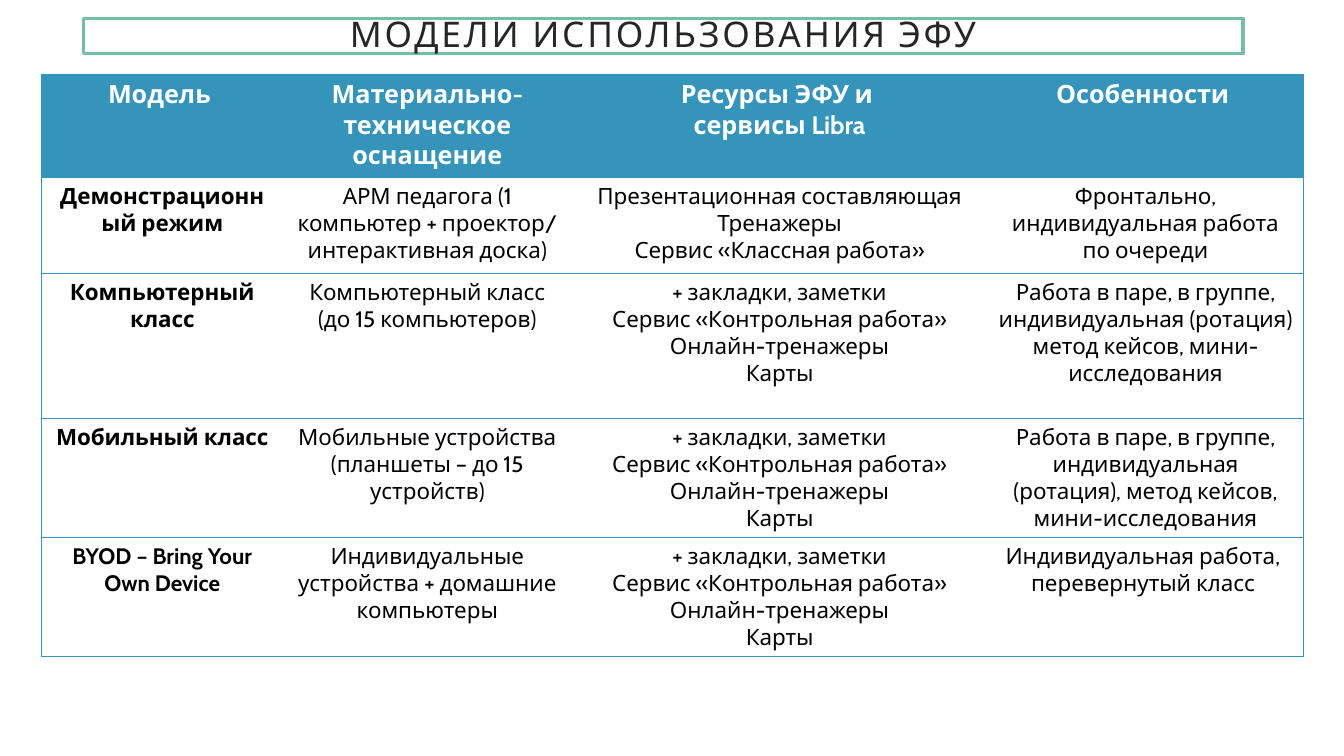
import pptx
import pptx.util
import pptx.dml.color
import pptx.enum.text
import lxml.etree

Pt = pptx.util.Pt
RGB = pptx.dml.color.RGBColor
ALIGN = pptx.enum.text.PP_ALIGN
ANCHOR = pptx.enum.text.MSO_ANCHOR

BLUE = RGB(0x34, 0x94, 0xBA)
GREEN = RGB(0x75, 0xBD, 0xA7)
DARK = RGB(0x26, 0x26, 0x26)
BLACK = RGB(0, 0, 0)
WHITE = RGB(255, 255, 255)
FONT = "Cabin"

TITLE = "МОДЕЛИ ИСПОЛЬЗОВАНИЯ ЭФУ"
SERVICES = [
    "+ закладки, заметки",
    "Сервис «Контрольная работа»",
    "Онлайн-тренажеры",
    "Карты",
]
ROWS = [
    [
        ["Модель "],
        ["Материально-техническое оснащение"],
        ["Ресурсы ЭФУ и ", "сервисы Libra"],
        ["Особенности "],
    ],
    [
        ["Демонстрационный режим"],
        ["АРМ педагога (1 компьютер + проектор/ интерактивная доска)"],
        ["Презентационная составляющая", "Тренажеры", "Сервис «Классная работа»"],
        ["Фронтально, индивидуальная работа по очереди"],
    ],
    [
        ["Компьютерный класс"],
        ["Компьютерный класс (до 15 компьютеров)"],
        SERVICES,
        ["Работа в паре, в группе, индивидуальная (ротация)",
         "метод кейсов, мини-исследования"],
    ],
    [
        ["Мобильный класс"],
        ["Мобильные устройства (планшеты – до 15 устройств)"],
        SERVICES,
        ["Работа в паре, в группе, индивидуальная (ротация), метод кейсов, "
         "мини-исследования"],
    ],
    [
        ["BYOD – Bring Your Own Device"],
        ["Индивидуальные устройства + домашние компьютеры"],
        SERVICES,
        ["Индивидуальная работа, ", "перевернутый класс "],
    ],
]
COL_WIDTHS = [172.8, 205.9, 297.4, 225.4]
ROW_HEIGHTS = [74, 68.7, 103.5, 85, 84.3]
TABLE_LEFT, TABLE_TOP = 29.5, 52.8


def apply(obj, values):
    for name, value in values.items():
        setattr(obj, name, value)


def add_border(cell, side, visible):
    tag = pptx.oxml.ns.qn
    ln = lxml.etree.SubElement(cell._tc.get_or_add_tcPr(), tag("a:ln" + side), w=str(Pt(0.5)))
    if visible:
        fill = lxml.etree.SubElement(ln, tag("a:solidFill"))
        lxml.etree.SubElement(fill, tag("a:srgbClr"), val=str(BLUE))
    else:
        lxml.etree.SubElement(ln, tag("a:noFill"))


def add_title(s):
    sp = s.shapes.title
    apply(sp, dict(left=Pt(59.8), top=Pt(13.2), width=Pt(828), height=Pt(25.2)))
    sp.fill.solid()
    sp.fill.fore_color.rgb = WHITE
    sp.line.color.rgb = GREEN
    sp.line.width = Pt(2.5)
    tf = sp.text_frame
    margins = {"margin_" + side: Pt(14.4) for side in ("left", "top", "right", "bottom")}
    apply(tf, dict(margins, word_wrap=True, vertical_anchor=ANCHOR.MIDDLE,
                   auto_size=pptx.enum.text.MSO_AUTO_SIZE.NONE))
    p = tf.paragraphs[0]
    apply(p, dict(alignment=ALIGN.CENTER, line_spacing=0.9))
    r = p.add_run()
    r.text = TITLE
    apply(r.font, dict(name=FONT, size=Pt(25.2), bold=False))
    r.font.color.rgb = DARK
    r.font._element.set("spc", "200")


def add_cell(cell, lines, row, col):
    header = row == 0
    for side, visible in (("L", col == 0), ("R", col == len(COL_WIDTHS) - 1),
                          ("T", True), ("B", True)):
        add_border(cell, side, visible)
    cell.fill.solid()
    cell.fill.fore_color.rgb = BLUE if header else WHITE
    tf = cell.text_frame
    for i, line in enumerate(lines):
        p = tf.add_paragraph() if i else tf.paragraphs[0]
        p.alignment = ALIGN.CENTER
        r = p.add_run()
        r.text = line
        apply(r.font, dict(name=FONT, size=Pt(18 if header else 16), bold=header or col == 0))
        r.font.color.rgb = WHITE if header else BLACK


def add_models(s):
    table = s.shapes.add_table(len(ROWS), len(COL_WIDTHS), Pt(TABLE_LEFT), Pt(TABLE_TOP),
                               Pt(sum(COL_WIDTHS)), Pt(sum(ROW_HEIGHTS))).table
    apply(table, dict(first_row=False, horz_banding=False))
    for column, width in zip(table.columns, COL_WIDTHS):
        column.width = Pt(width)
    for row, height in zip(table.rows, ROW_HEIGHTS):
        row.height = Pt(height)
    for i, cells in enumerate(ROWS):
        for j, lines in enumerate(cells):
            add_cell(table.cell(i, j), lines, i, j)


def main():
    prs = pptx.Presentation()
    apply(prs, dict(slide_width=Pt(960), slide_height=Pt(540)))
    s = prs.slides.add_slide(prs.slide_layouts[5])
    add_title(s)
    add_models(s)
    prs.save("out.pptx")


if __name__ == "__main__":
    main()
